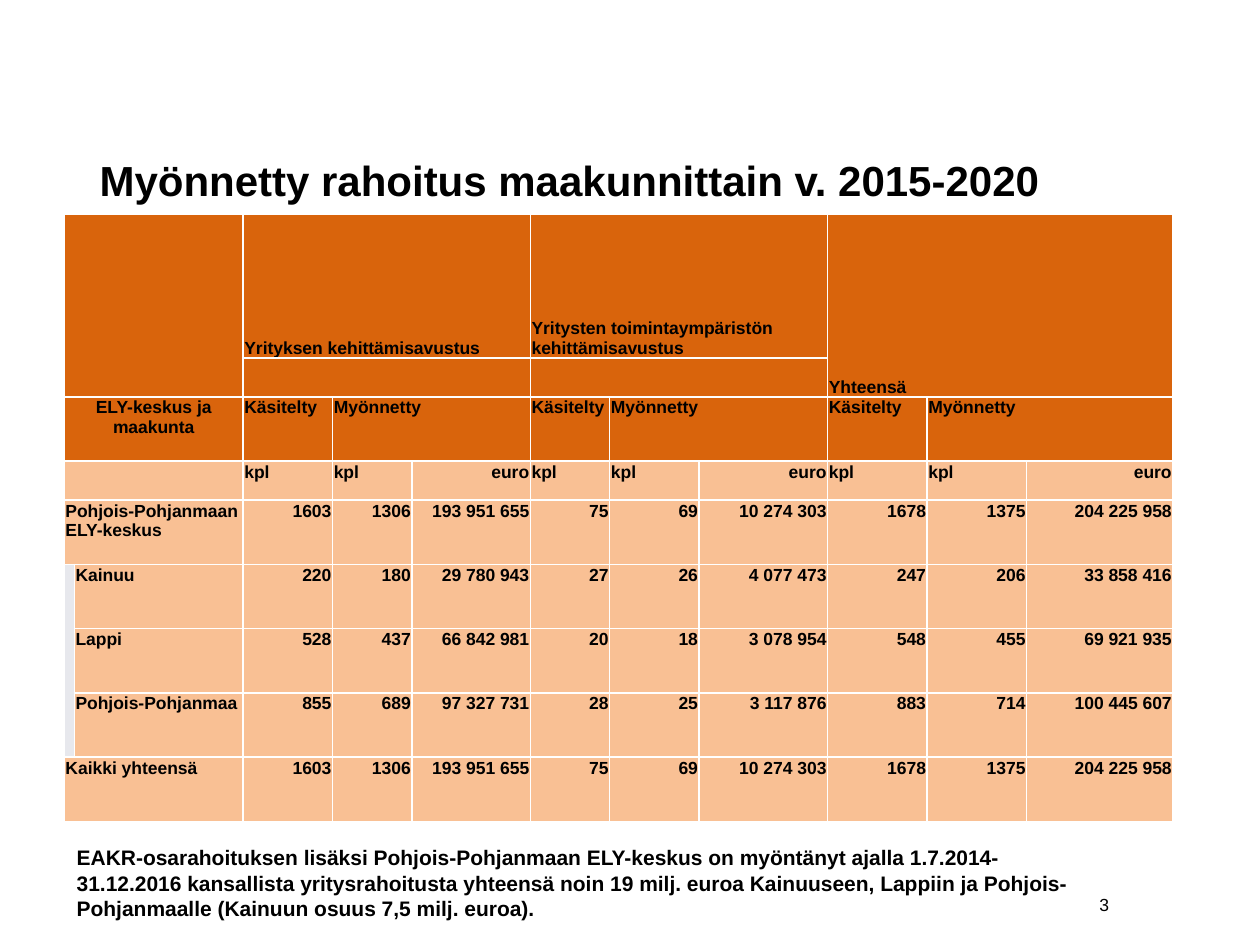
from dataclasses import dataclass

from lxml.etree import SubElement
from pptx import Presentation
from pptx.dml.color import RGBColor
from pptx.enum.text import MSO_ANCHOR as Anchor, PP_ALIGN as Align
from pptx.oxml.ns import qn
from pptx.util import Inches, Pt


@dataclass(frozen=True)
class Theme:
    font: str = "Arial"
    ink: str = "000000"
    header: str = "D9640C"
    body: str = "F9C094"
    indent: str = "E7E8ED"
    border: str = "FFFFFF"
    title_size: int = 24
    note_size: int = 12
    small_size: int = 10


THEME = Theme()
TITLE = "Myönnetty rahoitus maakunnittain v. 2015-2020"
NOTE = ("EAKR-osarahoituksen lisäksi Pohjois-Pohjanmaan ELY-keskus on myöntänyt ajalla "
        "1.7.2014-31.12.2016 kansallista yritysrahoitusta yhteensä noin 19 milj. euroa "
        "Kainuuseen, Lappiin ja Pohjois-Pohjanmaalle (Kainuun osuus 7,5 milj. euroa).")

COLUMN_WIDTHS = [0.08, 1.34, 0.71, 0.63, 0.94, 0.63, 0.71, 1.02, 0.79, 0.79, 1.16]
ROW_HEIGHTS = [1.14, 0.3, 0.51, 0.3] + [0.51] * 5
HEADER_ROWS = 3
FIRST_VALUE = 2
GROUPS = ["Yrityksen kehittämisavustus",
          "Yritysten toimintaympäristön kehittämisavustus", "Yhteensä"]
GROUP_SIZE = 3

# Company grants, then business environment grants: processed, granted, euros
PROVINCES = {
    "Kainuu": [220, 180, 29780943, 27, 26, 4077473],
    "Lappi": [528, 437, 66842981, 20, 18, 3078954],
    "Pohjois-Pohjanmaa": [855, 689, 97327731, 28, 25, 3117876],
}


def with_group_sum(values):
    """Append the sum of the two grant groups as a third group."""
    return values + [a + b for a, b in zip(values[:GROUP_SIZE], values[GROUP_SIZE:])]


def format_values(values):
    """Group the digits of the euro column only, the last one in each group."""
    return [f"{value:,}".replace(",", " ") if i % GROUP_SIZE == 2 else str(value)
            for i, value in enumerate(values)]


def grid_texts():
    group_names = [text for name in GROUPS for text in (name, "", "")]
    provinces = {name: with_group_sum(values) for name, values in PROVINCES.items()}
    totals = format_values([sum(column) for column in zip(*provinces.values())])
    return [
        ["", ""] + group_names,
        [""] * len(COLUMN_WIDTHS),
        ["ELY-keskus ja maakunta", ""] + ["Käsitelty", "Myönnetty", ""] * len(GROUPS),
        ["", ""] + ["kpl", "kpl", "euro"] * len(GROUPS),
        ["Pohjois-Pohjanmaan ELY-keskus", ""] + totals,
        *(["", name] + format_values(values) for name, values in provinces.items()),
        ["Kaikki yhteensä", ""] + totals,
    ]


def merge_spans(table):
    spans = [(0, 0, 1, 1), (5, 0, 7, 0)] + [(row, 0, row, 1) for row in (2, 3, 4, 8)]
    for group in range(len(GROUPS)):
        first = FIRST_VALUE + group * GROUP_SIZE
        last = first + GROUP_SIZE - 1
        spans.append((2, first + 1, 2, last))
        if GROUPS[group] == "Yhteensä":
            spans.append((0, first, 1, last))
        else:
            spans += [(row, first, row, last) for row in (0, 1)]
    for top, left, bottom, right in spans:
        table.cell(top, left).merge(table.cell(bottom, right))


def write(frame, text, size, bold=True, align=Align.LEFT):
    paragraph = frame.paragraphs[0]
    paragraph.alignment = align
    run = paragraph.add_run()
    run.text = text
    for name, value in {"name": THEME.font, "size": Pt(size), "bold": bold}.items():
        setattr(run.font, name, value)
    run.font.color.rgb = RGBColor.from_string(THEME.ink)


def add_borders(cell):
    properties = cell._tc.get_or_add_tcPr()
    for side in ("a:lnL", "a:lnR", "a:lnT", "a:lnB"):
        line = SubElement(properties, qn(side), w=str(Pt(1)))
        SubElement(SubElement(line, qn("a:solidFill")), qn("a:srgbClr"), val=THEME.border)


def style_cell(cell, row, column):
    margins = {"margin_left": 0.01, "margin_right": 0.01, "margin_top": 0.01, "margin_bottom": 0}
    for name, inches in margins.items():
        setattr(cell, name, Inches(inches))
    cell.vertical_anchor = Anchor.BOTTOM if row == 0 else Anchor.TOP
    add_borders(cell)
    if row < HEADER_ROWS:
        color = THEME.header
    else:
        color = THEME.indent if column == 0 and 5 <= row <= 7 else THEME.body
    cell.fill.solid()
    cell.fill.fore_color.rgb = RGBColor.from_string(color)


def cell_alignment(row, column, text):
    if row == 2 and column == 0:
        return Align.CENTER
    is_value = row > HEADER_ROWS and column >= FIRST_VALUE
    return Align.RIGHT if is_value or text == "euro" else Align.LEFT


def add_funding_table(slide):
    table = slide.shapes.add_table(
        len(ROW_HEIGHTS), len(COLUMN_WIDTHS), Inches(0.51), Inches(1.7),
        Inches(sum(COLUMN_WIDTHS)), Inches(sum(ROW_HEIGHTS))).table
    for column, width in zip(table.columns, COLUMN_WIDTHS):
        column.width = Inches(width)
    for row, height in zip(table.rows, ROW_HEIGHTS):
        row.height = Inches(height)
    merge_spans(table)
    for r, texts in enumerate(grid_texts()):
        for c, text in enumerate(texts):
            cell = table.cell(r, c)
            style_cell(cell, r, c)
            if text:
                write(cell.text_frame, text, THEME.small_size, align=cell_alignment(r, c, text))


def add_title(slide):
    title = slide.shapes.title
    place = {"left": 0.69, "top": 1.15, "width": 7.86, "height": 0.56}
    for name, inches in place.items():
        setattr(title, name, Inches(inches))
    title.text_frame.vertical_anchor = Anchor.MIDDLE
    write(title.text_frame, TITLE, THEME.title_size)


def add_text(slide, box, text, size, **style):
    frame = slide.shapes.add_textbox(*map(Inches, box)).text_frame
    frame.word_wrap = True
    frame.vertical_anchor = Anchor.MIDDLE
    write(frame, text, size, **style)


def main():
    deck = Presentation()
    deck.slide_width, deck.slide_height = Inches(10), Inches(7.5)
    slide = deck.slides.add_slide(deck.slide_layouts[5])
    add_title(slide)
    add_text(slide, (8.46, 6.98, 0.44, 0.39), "3", THEME.small_size,
             bold=False, align=Align.RIGHT)
    add_funding_table(slide)
    add_text(slide, (0.51, 6.66, 8.11, 0.69), NOTE, THEME.note_size)
    deck.save("out.pptx")


if __name__ == "__main__":
    main()
